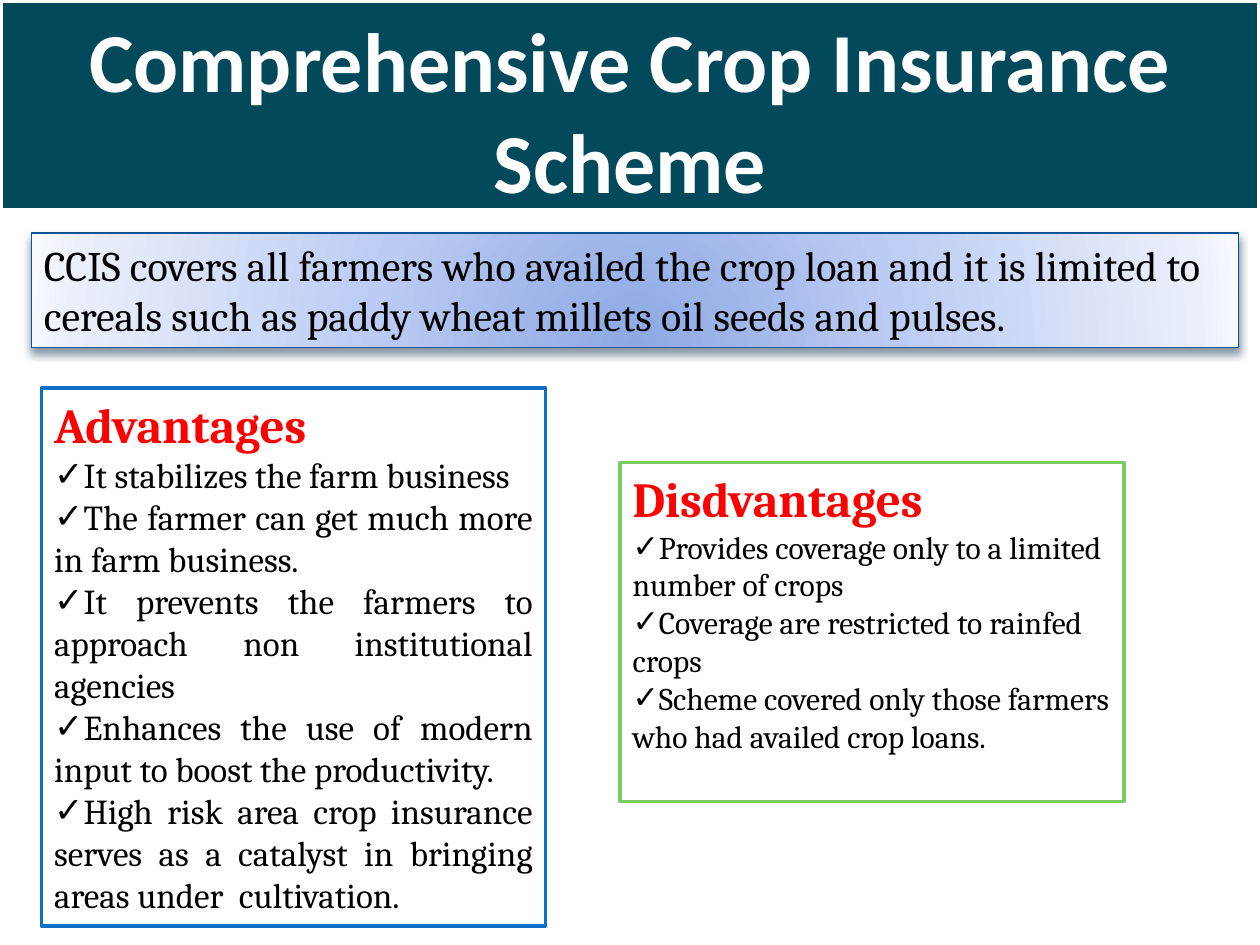
import pptx
import pptx.dml.color
import pptx.enum.shapes
import pptx.enum.text
import pptx.oxml
import pptx.oxml.ns
import pptx.util

Inches = pptx.util.Inches
Pt = pptx.util.Pt
ALIGN = pptx.enum.text.PP_ALIGN
ANCHOR = pptx.enum.text.MSO_ANCHOR
NAMESPACE = pptx.oxml.ns.nsdecls("a")


def color(value):
    return pptx.dml.color.RGBColor.from_string(value)


class SlideBuilder:
    title_font = "Calibri"
    text_font = "Cambria"
    heading_color = "FF0000"
    text_color = "000000"
    heading_size = 28

    def __init__(self, page):
        self.page = page

    def place(self, shape, left, top, width, height):
        shape.left, shape.top = Inches(left), Inches(top)
        shape.width, shape.height = Inches(width), Inches(height)

    def paint(self, shape, fill, line, weight):
        shape.fill.solid()
        shape.fill.fore_color.rgb = color(fill)
        shape.line.color.rgb = color(line)
        shape.line.width = Pt(weight)

    def frame(self, shape, anchor):
        frame = shape.text_frame
        frame.word_wrap = True
        frame.auto_size = pptx.enum.text.MSO_AUTO_SIZE.NONE
        frame.vertical_anchor = anchor
        return frame

    def add_text(self, para, text, size, font, ink, bold=False, align=ALIGN.LEFT):
        para.alignment = align
        para.space_before = Pt(0)
        span = para.add_run()
        span.text = text
        span.font.size = Pt(size)
        span.font.name = font
        span.font.bold = bold
        span.font.color.rgb = color(ink)

    def bullet(self, para, mark=None):
        properties = para._p.get_or_add_pPr()
        properties.set("marL", "0")
        properties.set("indent", "0")
        tag = f'<a:buChar {NAMESPACE} char="{mark}"/>' if mark else f"<a:buNone {NAMESPACE}/>"
        properties.append(pptx.oxml.parse_xml(tag))

    def title(self, text, bounds, fill, line):
        box = self.page.shapes.title
        self.place(box, *bounds)
        self.paint(box, fill, line, 3)
        frame = self.frame(box, ANCHOR.BOTTOM)
        frame.margin_left = frame.margin_right = frame.margin_bottom = 0
        self.add_text(frame.paragraphs[0], text, 48, self.title_font, "FFFFFF", True, ALIGN.CENTER)

    def banner(self, text, bounds, stops, line):
        box = self.page.shapes.add_shape(
            pptx.enum.shapes.MSO_SHAPE.RECTANGLE, *map(Inches, bounds))
        self.paint(box, stops[0][1], line, 0.75)
        self.radial_fill(box, stops)
        self.soft_shadow(box)
        para = self.frame(box, ANCHOR.TOP).paragraphs[0]
        self.add_text(para, text, 24, self.text_font, self.text_color)

    def radial_fill(self, shape, stops):
        marks = "".join(f'<a:gs pos="{position * 1000}"><a:srgbClr val="{value}"/></a:gs>'
                        for position, value in stops)
        gradient = pptx.oxml.parse_xml(
            f'<a:gradFill {NAMESPACE} rotWithShape="1"><a:gsLst>{marks}</a:gsLst>'
            '<a:path path="circle"><a:fillToRect l="50000" t="130000" r="50000" b="-30000"/>'
            '</a:path></a:gradFill>')
        properties = shape._element.spPr
        properties.replace(properties.find(pptx.oxml.ns.qn("a:solidFill")), gradient)

    def soft_shadow(self, shape):
        shape.shadow.inherit = False
        effects = shape._element.spPr.find(pptx.oxml.ns.qn("a:effectLst"))
        effects.append(pptx.oxml.parse_xml(
            f'<a:outerShdw {NAMESPACE} blurRad="{Pt(4.5)}" dist="{Pt(3)}" dir="5400000" '
            'rotWithShape="0"><a:srgbClr val="042747"><a:alpha val="48000"/></a:srgbClr>'
            '</a:outerShdw>'))

    def checklist(self, index, heading, items, bounds, line, size, align=ALIGN.LEFT):
        box = self.page.placeholders[index]
        self.place(box, *bounds)
        self.paint(box, "FFFFFF", line, 2)
        frame = self.frame(box, ANCHOR.TOP)
        para = frame.paragraphs[0]
        self.add_text(para, heading, self.heading_size, self.text_font, self.heading_color, True)
        self.bullet(para)
        for item in items:
            para = frame.add_paragraph()
            self.add_text(para, item, size, self.text_font, self.text_color, align=align)
            self.bullet(para, "✓")


def main():
    deck = pptx.Presentation()
    deck.slide_width, deck.slide_height = Inches(10), Inches(7.5)
    two_content = deck.slide_layouts[3]
    builder = SlideBuilder(deck.slides.add_slide(two_content))

    # Title band and summary
    builder.title("Comprehensive Crop Insurance Scheme", (0, 0, 10, 1.67), "03495C", "FFFFFF")
    builder.banner(
        "CCIS covers all farmers who availed the crop loan and it is limited to "
        "cereals such as paddy wheat millets oil seeds and pulses.",
        (0.25, 1.85, 9.58, 0.91),
        [(0, "8DA8E3"), (43, "BBCBF3"), (93, "EAEFFB"), (100, "F7F9FF")], "095295")

    # Pros and cons
    builder.checklist(1, "Advantages", [
        "It stabilizes the farm business",
        "The farmer can get much more in farm business.",
        "It prevents the farmers to approach non institutional agencies",
        "Enhances the use of modern input to boost the productivity.",
        "High risk area crop insurance serves as a catalyst in bringing areas under  cultivation.",
    ], (0.33, 3.08, 4, 4.27), "0F6FC6", 20, ALIGN.JUSTIFY)
    builder.checklist(2, "Disdvantages", [
        "Provides coverage only to a limited number of crops",
        "Coverage are restricted to rainfed crops",
        "Scheme covered only those farmers who had availed crop loans.",
    ], (4.92, 3.67, 4, 2.69), "7CCA62", 18)

    deck.save("out.pptx")


if __name__ == "__main__":
    main()
